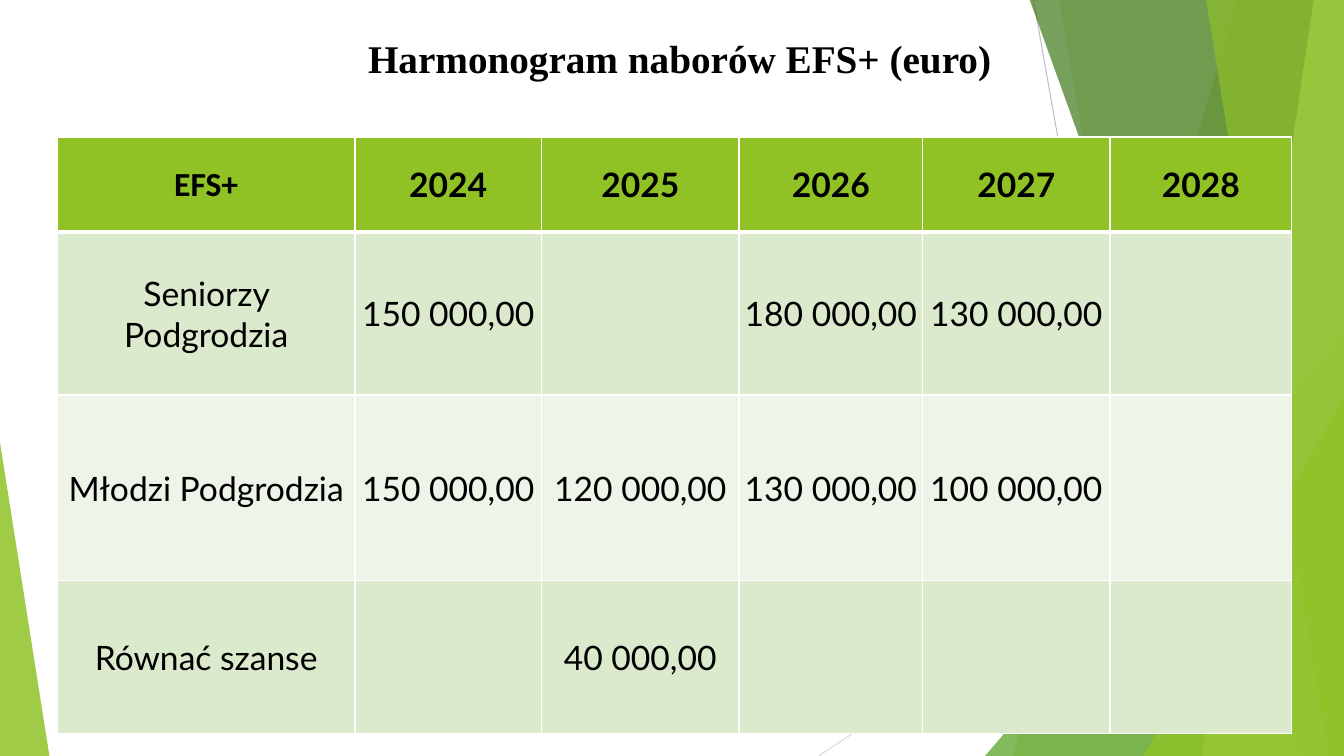
from dataclasses import dataclass

from lxml import etree
from pptx import Presentation
from pptx import util as u
from pptx.dml.color import RGBColor
from pptx.enum import shapes, text
from pptx.oxml import ns

PX = 9144  # EMU per px, 100 px to the inch
WIDTH, HEIGHT = 1333, 750


@dataclass(frozen=True)
class Theme:
    black: str = "000000"
    white: str = "FFFFFF"
    lime: str = "90C226"
    leaf: str = "54A021"
    forest: str = "3F7819"
    pale_lime: str = "C0E474"
    band_dark: str = "DBE9CD"
    band_light: str = "EEF4E8"
    title_font: str = "Times New Roman"
    corner_font: str = "Calibri"
    table_font: str = "Lato"
    title_size: int = 28
    table_size: int = 24


THEME = Theme()


@dataclass(frozen=True)
class Ray:
    start: tuple[int, int]
    end: tuple[int, int]
    color: str


@dataclass(frozen=True)
class Facet:
    """A translucent panel on the right edge, given by its left corners."""
    top_left: int
    bottom_left: int
    color: str
    opacity: int


@dataclass(frozen=True)
class Wedge:
    """A translucent right triangle; apex is 0 for left, 1 for right."""
    box: tuple[int, int, int, int]
    apex: int
    color: str
    opacity: int


DECORATION = (
    Ray((1025, 0), (1158, 750), "BFBFBF"),
    Ray((1333, 403), (812, 750), "D9D9D9"),
    Facet(1228, 1004, THEME.lime, 30),
    Facet(1050, 1183, THEME.lime, 20),
    Wedge((977, 333, 356, 417), 1, THEME.leaf, 72),
    Facet(1021, 1291, THEME.forest, 70),
    Facet(1303, 1192, THEME.pale_lime, 70),
    Facet(1196, 1318, THEME.lime, 65),
    Wedge((1134, 393, 199, 357), 1, THEME.lime, 80),
    Wedge((0, 439, 49, 311), 0, THEME.lime, 85),
)

TITLE = "Harmonogram naborów EFS+ (euro)"
TITLE_BOX = (99, 23, 1150, 74)
TABLE_BOX = (57, 136, 1225, 592)
COLUMN_WIDTHS = (295, 185, 196, 182, 186, 180)
ROW_HEIGHTS = (94, 162, 184, 152)
SCHEDULE = (
    ("EFS+", "2024", "2025", "2026", "2027", "2028"),
    ("Seniorzy Podgrodzia", "150 000,00", "", "180 000,00", "130 000,00", ""),
    ("Młodzi Podgrodzia", "150 000,00", "120 000,00", "130 000,00", "100 000,00", ""),
    ("Równać szanse", "", "40 000,00", "", "", ""),
)


def emu(lengths: tuple[int, ...]) -> list[u.Emu]:
    return [u.Emu(length * PX) for length in lengths]


def write(frame, content: str, *, font: str, size: int, bold: bool = False,
          spacing: float = 1.0) -> None:
    paragraph = frame.paragraphs[0]
    paragraph.alignment = text.PP_ALIGN.CENTER
    paragraph.line_spacing = spacing
    run = paragraph.add_run()
    run.text = content
    run.font.name = font
    run.font.size = u.Pt(size)
    run.font.bold = bold
    run.font.color.rgb = RGBColor.from_string(THEME.black)


def paint(shape, color: str, opacity: int) -> None:
    shape.shadow.inherit = False
    shape.line.fill.background()
    shape.fill.solid()
    shape.fill.fore_color.rgb = RGBColor.from_string(color)
    tint = shape._element.spPr.find(".//" + ns.qn("a:srgbClr"))
    etree.SubElement(tint, ns.qn("a:alpha"), val=str(opacity * 1000))


def draw_ray(slide, ray: Ray) -> None:
    line = slide.shapes.add_connector(
        shapes.MSO_CONNECTOR.STRAIGHT, *emu(ray.start + ray.end))
    line.line.color.rgb = RGBColor.from_string(ray.color)
    line.line.width = u.Pt(0.75)
    etree.SubElement(line._element.spPr, ns.qn("a:effectLst"))


def draw_facet(slide, facet: Facet) -> None:
    outline = slide.shapes.build_freeform(facet.top_left, -1, scale=PX)
    outline.add_line_segments(
        [(WIDTH, -1), (WIDTH, HEIGHT), (facet.bottom_left, HEIGHT)], close=True)
    paint(outline.convert_to_shape(), facet.color, facet.opacity)


def draw_wedge(slide, wedge: Wedge) -> None:
    triangle = slide.shapes.add_shape(
        shapes.MSO_SHAPE.ISOSCELES_TRIANGLE, *emu(wedge.box))
    triangle.adjustments[0] = wedge.apex
    paint(triangle, wedge.color, wedge.opacity)


def border(cell, top: int, bottom: int) -> None:
    """Rule the cell in white: 1 pt at the sides, given widths above and below."""
    properties = cell._tc.get_or_add_tcPr()
    sides = {"lnL": 1, "lnR": 1, "lnT": top, "lnB": bottom}
    for position, (side, points) in enumerate(sides.items()):
        rule = etree.Element(ns.qn(f"a:{side}"), w=str(u.Pt(points)))
        fill = etree.SubElement(rule, ns.qn("a:solidFill"))
        etree.SubElement(fill, ns.qn("a:srgbClr"), val=THEME.white)
        properties.insert(position, rule)


def draw_schedule(slide) -> None:
    table = slide.shapes.add_table(
        len(ROW_HEIGHTS), len(COLUMN_WIDTHS), *emu(TABLE_BOX)).table
    for column, width in zip(table.columns, emu(COLUMN_WIDTHS)):
        column.width = width
    for row, height in zip(table.rows, emu(ROW_HEIGHTS)):
        row.height = height

    row_fills = (THEME.lime, THEME.band_dark, THEME.band_light, THEME.band_dark)
    for r, (entries, row_fill) in enumerate(zip(SCHEDULE, row_fills)):
        for c, entry in enumerate(entries):
            cell = table.cell(r, c)
            cell.fill.solid()
            cell.fill.fore_color.rgb = RGBColor.from_string(row_fill)
            border(cell, top=3 if r == 1 else 1, bottom=3 if r == 0 else 1)
            cell.vertical_anchor = text.MSO_ANCHOR.MIDDLE
            cell.margin_left = cell.margin_right = cell.margin_top = u.Emu(PX)
            cell.margin_bottom = 0
            if entry:
                font = THEME.corner_font if r == c == 0 else THEME.table_font
                write(cell.text_frame, entry, font=font,
                      size=THEME.table_size, bold=r == 0)


def place_title(slide) -> None:
    title = slide.shapes.title
    title.left, title.top, title.width, title.height = emu(TITLE_BOX)
    frame = title.text_frame
    frame.word_wrap = True
    frame.auto_size = text.MSO_AUTO_SIZE.NONE
    frame.vertical_anchor = text.MSO_ANCHOR.MIDDLE
    write(frame, TITLE, font=THEME.title_font, size=THEME.title_size,
          bold=True, spacing=0.9)
    slide.shapes._spTree.append(title._element)  # bring to front


def main() -> None:
    deck = Presentation()
    deck.slide_width, deck.slide_height = emu((WIDTH, HEIGHT))
    slide = deck.slides.add_slide(deck.slide_layouts.get_by_name("Title Only"))
    slide.background.fill.solid()
    slide.background.fill.fore_color.rgb = RGBColor.from_string(THEME.white)

    painters = {Ray: draw_ray, Facet: draw_facet, Wedge: draw_wedge}
    for part in DECORATION:
        painters[type(part)](slide, part)
    draw_schedule(slide)
    place_title(slide)
    deck.save("out.pptx")


if __name__ == "__main__":
    main()
